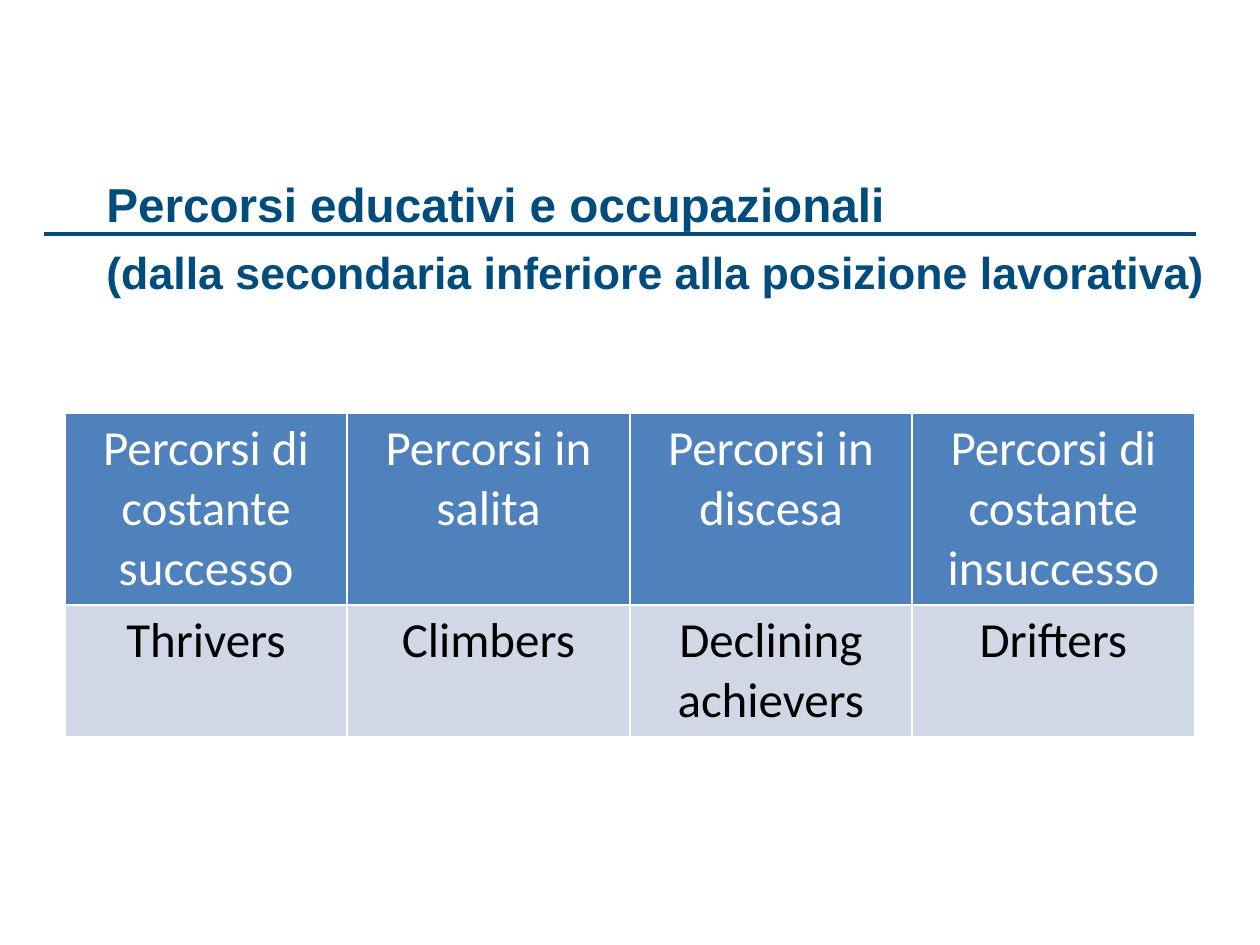
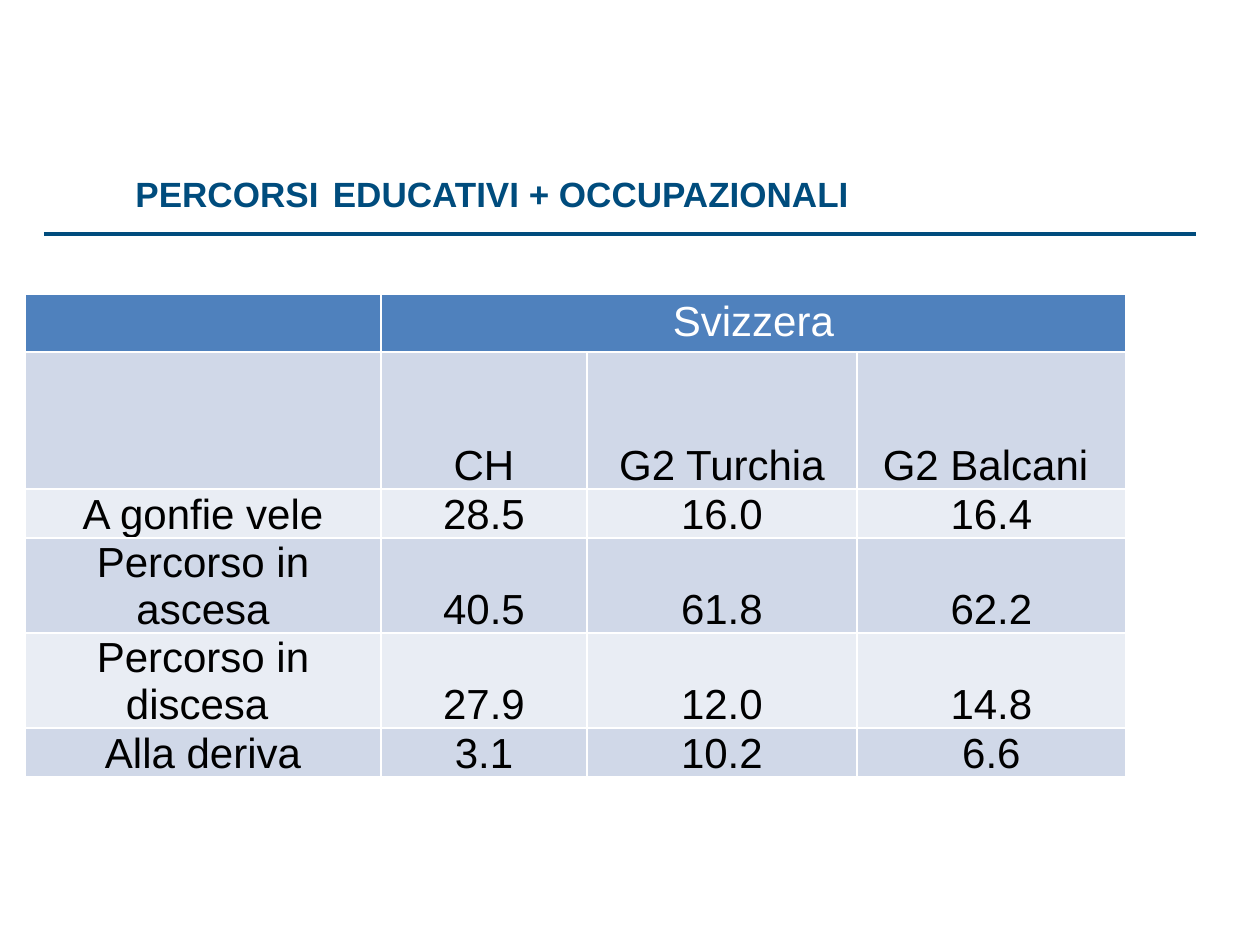
from lxml.etree import SubElement
from pptx import Presentation
from pptx.dml.color import RGBColor
from pptx.enum.shapes import MSO_CONNECTOR as Connector
from pptx.enum.text import MSO_ANCHOR as Anchor, PP_ALIGN as Align
from pptx.oxml.ns import qn
from pptx.util import Pt

EMU_PER_INCH, PX_PER_INCH = 914400, 126
COLORS = {
    "title": "004C7D",
    "spacer": "376092",
    "header": "4F81BD",
    "band_dark": "D0D8E8",
    "band_light": "E9EDF4",
    "white": "FFFFFF",
    "black": "000000",
}


def px(length):
    return length * EMU_PER_INCH // PX_PER_INCH


def color(name):
    return RGBColor.from_string(COLORS[name])


class Deck:
    def __init__(self):
        self.deck = Presentation()
        self.deck.slide_width = px(1260)
        self.deck.slide_height = px(945)
        self.page = None

    def add_page(self):
        self.page = self.deck.slides.add_slide(self.deck.slide_layouts[6])
        self.add_rule(44, 1196, 234)

    def add_rule(self, left, right, top):
        rule = self.page.shapes.add_connector(
            Connector.STRAIGHT, px(left), px(top), px(right), px(top))
        rule.line.color.rgb = color("title")
        rule.line.width = Pt(2)
        SubElement(rule._element.spPr, qn("a:effectLst"))

    def style_font(self, font, size, face, tint, bold=False):
        font.size = Pt(size)
        font.name = face
        font.bold = bold
        font.color.rgb = color(tint)

    def add_title(self, left, top, width, height, lines):
        box = self.page.shapes.add_textbox(px(left), px(top), px(width), px(height))
        frame = box.text_frame
        frame.word_wrap = True
        for index, spans in enumerate(lines):
            para = frame.add_paragraph() if index else frame.paragraphs[0]
            properties = para._p.get_or_add_pPr()
            properties.set("marL", str(px(48)))
            properties.set("indent", str(-px(48)))
            if index:
                para.space_before = Pt(7)
            for text, size, face, tint in spans:
                span = para.add_run()
                span.text = text
                self.style_font(span.font, size, face, tint, True)

    def add_borders(self, cell):
        properties = cell._tc.get_or_add_tcPr()
        for side in ("lnL", "lnR", "lnT", "lnB"):
            line = SubElement(properties, qn(f"a:{side}"), w=str(Pt(1)))
            fill = SubElement(line, qn("a:solidFill"))
            SubElement(fill, qn("a:srgbClr"), val=COLORS["white"])

    def add_table(self, left, top, widths, heights, rows, size, face, header_pad=6, tight=False):
        frame = self.page.shapes.add_table(
            len(rows), len(widths), px(left), px(top), px(sum(widths)), px(sum(heights)))
        table = frame.table
        table.first_row = table.horz_banding = False
        for column, width in zip(table.columns, widths):
            column.width = px(width)
        for index, (row, height) in enumerate(zip(rows, heights)):
            table.rows[index].height = px(height)
            band = "band_dark" if index % 2 else "band_light"
            for position, text in enumerate(row):
                cell = table.cell(index, position)
                self.add_borders(cell)
                cell.fill.solid()
                cell.fill.fore_color.rgb = color(band if index else "header")
                if index == 0:
                    cell.margin_top = cell.margin_bottom = px(header_pad)
                elif tight:
                    cell.vertical_anchor = Anchor.BOTTOM
                    cell.margin_left = cell.margin_right = cell.margin_top = px(1)
                    cell.margin_bottom = 0
                para = cell.text_frame.paragraphs[0]
                para.text = text
                para.alignment = Align.CENTER
                for span in para.runs:
                    self.style_font(span.font, size, face, "black" if index else "white")
        return table


def build_paths_page(deck):
    deck.add_page()
    deck.add_title(94, 169, 1221, 149, [
        [("Percorsi educativi e occupazionali", 27.2, "Arial", "title")],
        [("(dalla secondaria inferiore alla posizione lavorativa)", 25.5, "Arial", "title")],
    ])
    deck.add_table(65, 413, [282, 283] * 2, [192, 132], [
        ["Percorsi di costante successo", "Percorsi in salita",
         "Percorsi in discesa", "Percorsi di costante insuccesso"],
        ["Thrivers", "Climbers", "Declining achievers", "Drifters"],
    ], 28, "Calibri")


def build_shares_page(deck):
    deck.add_page()
    table = deck.add_table(25, 294, [356, 206, 270, 269], [58, 137, 49, 95, 95, 49], [
        ["", "Svizzera", "", ""],
        ["", "CH", "G2 Turchia", "G2 Balcani "],
        ["A gonfie vele", "28.5", "16.0", "16.4"],
        ["Percorso in ascesa", "40.5", "61.8", "62.2"],
        ["Percorso in discesa ", "27.9", "12.0", "14.8"],
        ["Alla deriva", "3.1", "10.2", "6.6"],
    ], 24, "Arial", header_pad=5, tight=True)
    table.cell(0, 1).merge(table.cell(0, 3))
    deck.add_title(123, 138, 1216, 159, [[
        ("PERCORSI", 20, "Arial", "title"),
        (" ", 36, "Calibri", "spacer"),
        ("EDUCATIVI + OCCUPAZIONALI", 20, "Arial", "title"),
    ]])


def main():
    deck = Deck()
    build_paths_page(deck)
    build_shares_page(deck)
    deck.deck.save("out.pptx")


if __name__ == "__main__":
    main()
